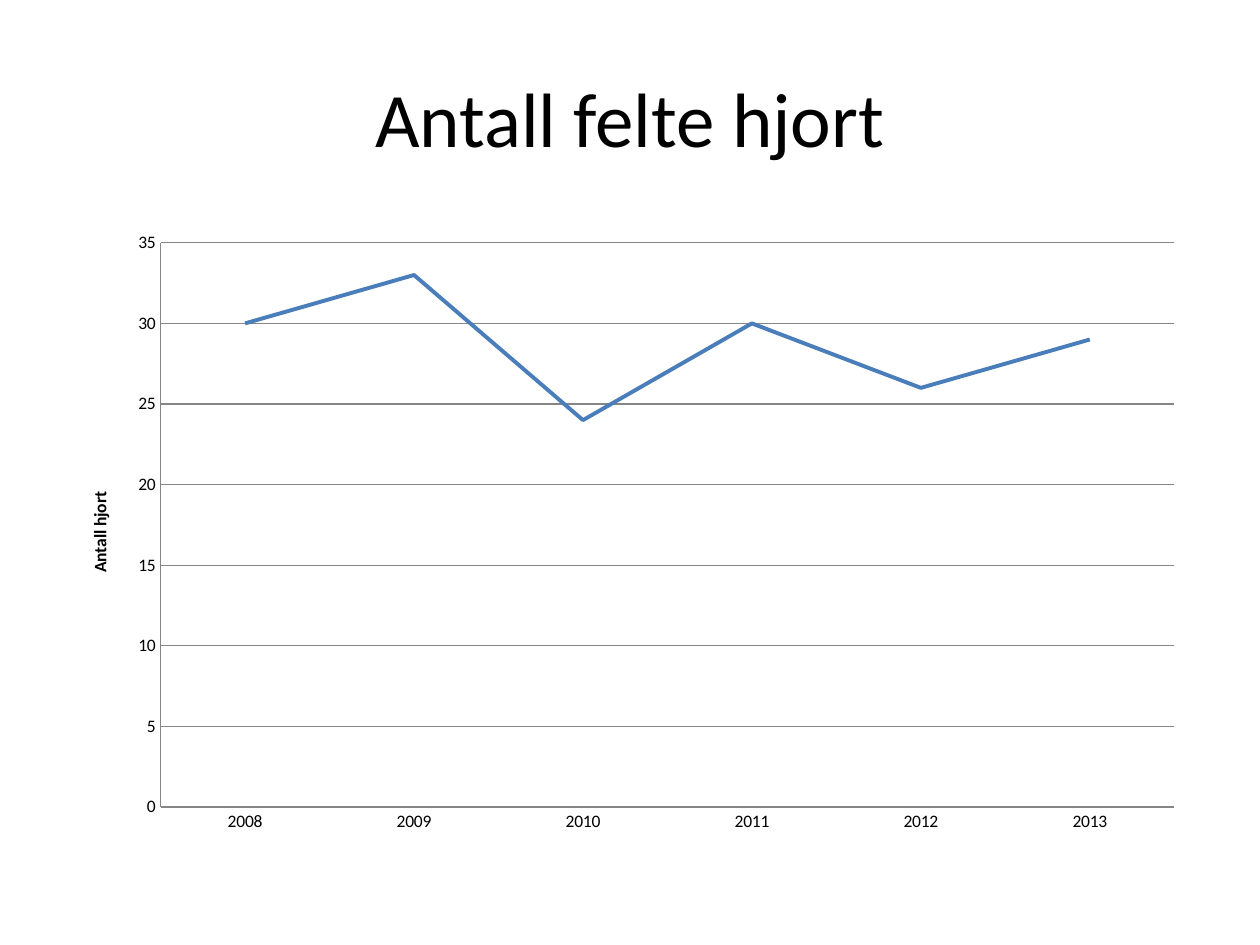
import pptx
import pptx.chart.data
import pptx.dml.color
import pptx.enum.chart
import pptx.enum.text
import pptx.util

Pt = pptx.util.Pt
RGBColor = pptx.dml.color.RGBColor

BLACK = RGBColor(0x00, 0x00, 0x00)
GRAY = RGBColor(0x86, 0x86, 0x86)
BLUE = RGBColor(0x4A, 0x7E, 0xBB)
FONT = "Calibri"
YEARS = ["2008", "2009", "2010", "2011", "2012", "2013"]
DEER = [30, 33, 24, 30, 26, 29]


def set_font(font, size, bold=False):
    """Apply the slide's typeface and text colour."""
    font.name = FONT
    font.size = Pt(size)
    font.bold = bold
    font.color.rgb = BLACK


def set_line(line, color, width):
    """Give a line its colour and width in points."""
    line.color.rgb = color
    line.width = Pt(width)


def add_title(s, text):
    """Fill and place the title placeholder."""
    sp = s.shapes.title
    sp.left, sp.top, sp.width, sp.height = Pt(36), Pt(21.6), Pt(648), Pt(90)
    tf = sp.text_frame
    tf.text = text
    tf.vertical_anchor = pptx.enum.text.MSO_ANCHOR.MIDDLE
    p = tf.paragraphs[0]
    p.alignment = pptx.enum.text.PP_ALIGN.CENTER
    set_font(p.font, 44)


def format_axes(chart):
    """Style both axes, the gridlines and the value axis title."""
    for axis in (chart.category_axis, chart.value_axis):
        axis.major_tick_mark = pptx.enum.chart.XL_TICK_MARK.NONE
        axis.minor_tick_mark = pptx.enum.chart.XL_TICK_MARK.NONE
        set_line(axis.format.line, GRAY, 0.75)
    axis = chart.value_axis
    axis.minimum_scale, axis.maximum_scale, axis.major_unit = 0, 35, 5
    axis.has_major_gridlines = True
    set_line(axis.major_gridlines.format.line, GRAY, 0.75)
    tf = axis.axis_title.text_frame
    tf.text = "Antall hjort"
    set_font(tf.paragraphs[0].font, 10, bold=True)


def add_line_chart(s):
    """Add the line chart of deer per year."""
    data = pptx.chart.data.CategoryChartData()
    data.categories = YEARS
    data.add_series("Series 1", DEER)
    chart = s.shapes.add_chart(
        pptx.enum.chart.XL_CHART_TYPE.LINE,
        Pt(36), Pt(126), Pt(648), Pt(356.4), data).chart
    chart.has_title = False
    chart.has_legend = False
    set_font(chart.font, 10)
    chart.plots[0].vary_by_categories = False
    series = chart.plots[0].series[0]
    series.smooth = False
    series.marker.style = pptx.enum.chart.XL_MARKER_STYLE.NONE
    set_line(series.format.line, BLUE, 2.25)
    format_axes(chart)


def main():
    """Build and save the slide."""
    prs = pptx.Presentation()
    prs.slide_width, prs.slide_height = Pt(720), Pt(540)
    s = prs.slides.add_slide(prs.slide_layouts[5])
    add_title(s, "Antall felte hjort")
    add_line_chart(s)
    prs.save("out.pptx")


if __name__ == "__main__":
    main()
